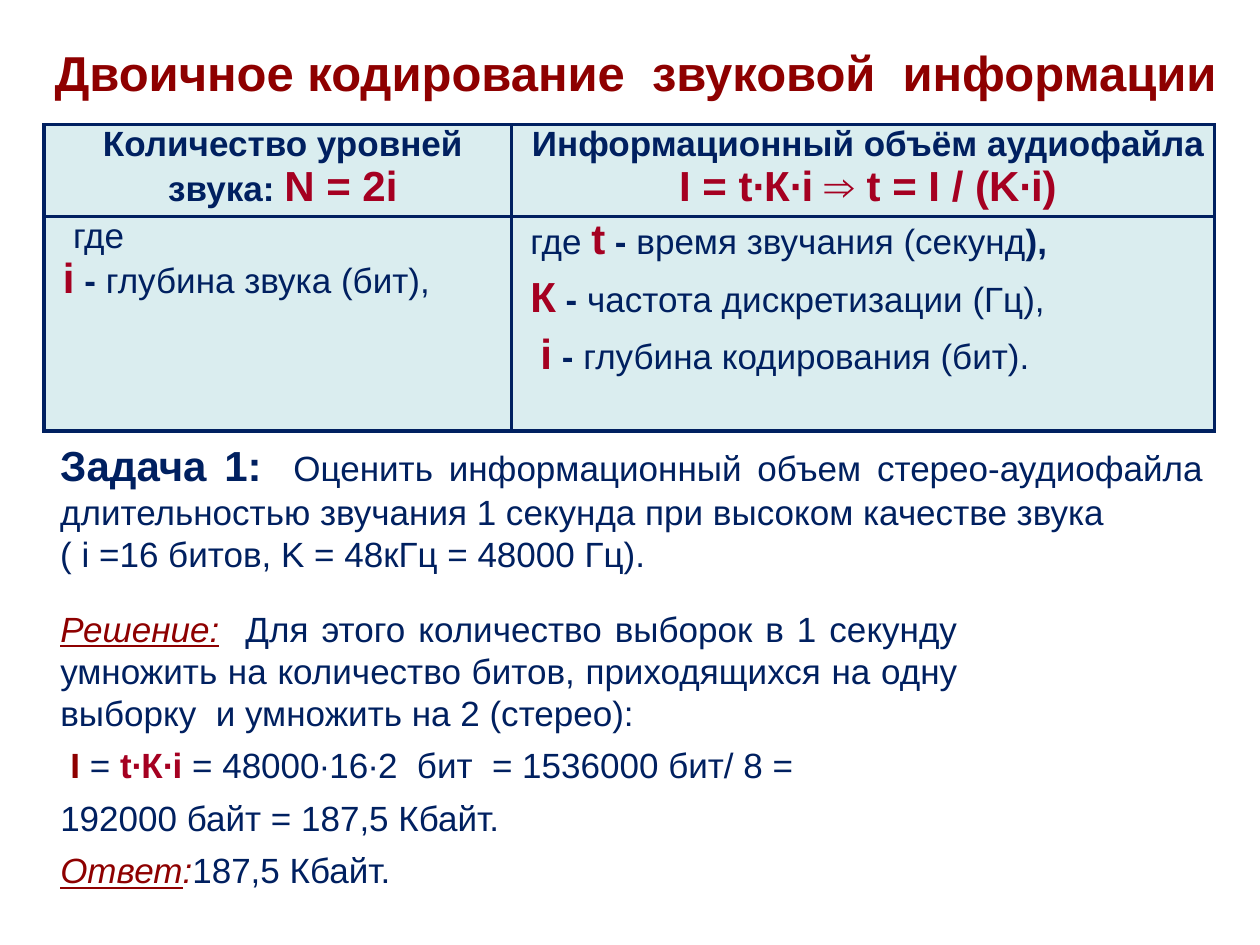
from lxml import etree
from pptx import Presentation
from pptx import util as u
from pptx.dml.color import RGBColor
from pptx.enum import text
from pptx.oxml.ns import qn

HUE = {"navy": "002060", "red": "A50021", "dark": "8E0000", "pale": "DAEDEF"}
LOOK = {
    "title": (28, "dark", "b"),
    "head": (24, "navy", "b"),
    "sign": (24, "red", "b"),
    "bold": (20, "navy", "b"),
    "body": (20, "navy", ""),
    "mark": (20, "dark", "iu"),
    "slant": (20, "dark", "i"),
    "sum": (20, "dark", "b"),
    "term": (20, "red", "b"),
}
ALIGN = {"l": text.PP_ALIGN.LEFT, "c": text.PP_ALIGN.CENTER, "j": text.PP_ALIGN.JUSTIFY}

# paragraph: align, indent, space before, runs
COLS = (3.71, 5.58)
ROWS = (0.73, 1.7)
CELLS = [
    [
        [("c", 0.08, 0, [("Количество уровней звука: ", "bold"), ("N = 2i", "sign")])],
        [("c", 0.08, 0, [("Информационный объём аудиофайла ", "bold"),
                         ("I = t∙К∙i ⇒ t = I / (K∙i)", "sign")])],
    ],
    [
        [("l", 0.16, 0, [("где", "body")]),
         ("l", 0.08, 0, [("i", "sign"), (" - ", "bold"), ("глубина звука (бит),", "body")])],
        [("j", 0.08, 0, [("где ", "body"), ("t", "sign"), (" - ", "bold"),
                         ("время звучания (секунд", "body"), ("),", "bold")]),
         ("l", 0.08, 6, [("К", "sign"), (" - ", "bold"),
                         ("частота дискретизации (Гц),", "body")]),
         ("l", 0.16, 6, [("i", "sign"), (" - ", "bold"),
                         ("глубина кодирования (бит).", "body")])],
    ],
]
BOXES = [
    ((0.2, 0.29, 9.69, 0.57),
     [("c", 0, 0, [("Двоичное кодирование  звуковой  информации", "title")])]),
    ((0.38, 4.77, 7.32, 2.37),
     [("j", 0, 0, [("Решение:", "mark"),
                   ("  Для этого количество выборок в 1 секунду умножить на количество "
                    "битов, приходящихся на одну выборку  и умножить на 2 (стерео):", "body")]),
      ("j", 0.08, 6, [("I ", "sum"), ("= ", "body"), ("t∙К∙i ", "term"),
                      ("= 48000∙16∙2  бит  = 1536000 бит/ 8 =", "body")]),
      ("j", 0, 6, [("192000 байт = 187,5 Кбайт.", "body")]),
      ("j", 0, 6, [("Ответ", "mark"), (":", "slant"), ("187,5 Кбайт.", "body")])]),
    ((0.38, 3.44, 9.27, 1.18),
     [("j", 0, 0, [("Задача 1:", "head"),
                   ("  Оценить информационный объем стерео-аудиофайла длительностью "
                    "звучания 1 секунда при высоком качестве звука", "body")]),
      ("j", 0, 0, [("( i =16 битов, K = 48кГц = 48000 Гц).", "body")])]),
]


def color(name):
    return RGBColor.from_string(HUE[name])


def write(frame, paras):
    frame.word_wrap = True
    for n, (align, indent, gap, runs) in enumerate(paras):
        para = frame.add_paragraph() if n else frame.paragraphs[0]
        para.alignment = ALIGN[align]
        if gap:
            para.space_before = u.Pt(gap)
        if indent:
            para._p.get_or_add_pPr().set("marL", str(u.Inches(indent)))
        for words, look in runs:
            run = para.add_run()
            run.text = words
            size, hue, flags = LOOK[look]
            font = run.font
            font.name, font.size = "Arial", u.Pt(size)
            font.bold, font.italic, font.underline = ("b" in flags, "i" in flags, "u" in flags)
            font.color.rgb = color(hue)


def border(cell):
    props = cell._tc.get_or_add_tcPr()
    for n, side in enumerate(("lnL", "lnR", "lnT", "lnB")):
        line = etree.Element(qn("a:" + side), w=str(u.Pt(2.25)))
        fill = etree.SubElement(line, qn("a:solidFill"))
        etree.SubElement(fill, qn("a:srgbClr"), val=HUE["navy"])
        props.insert(n, line)


def table(slide):
    grid = slide.shapes.add_table(len(ROWS), len(COLS), u.Inches(0.35), u.Inches(0.99),
                                  u.Inches(sum(COLS)), u.Inches(sum(ROWS))).table
    grid.first_row = grid.horz_banding = False
    for col, wide in zip(grid.columns, COLS):
        col.width = u.Inches(wide)
    for r, high in enumerate(ROWS):
        grid.rows[r].height = u.Inches(high)
        for c, paras in enumerate(CELLS[r]):
            cell = grid.cell(r, c)
            cell.margin_left = cell.margin_right = u.Inches(0.07)
            cell.margin_top = cell.margin_bottom = 0
            cell.fill.solid()
            cell.fill.fore_color.rgb = color("pale")
            border(cell)
            write(cell.text_frame, paras)


def main():
    deck = Presentation()
    deck.slide_width, deck.slide_height = u.Inches(10), u.Inches(7.5)
    slide = deck.slides.add_slide(deck.slide_layouts[6])
    table(slide)
    for place, paras in BOXES:
        frame = slide.shapes.add_textbox(*map(u.Inches, place)).text_frame
        write(frame, paras)
        frame.auto_size = text.MSO_AUTO_SIZE.SHAPE_TO_FIT_TEXT
    deck.save("out.pptx")


if __name__ == "__main__":
    main()
